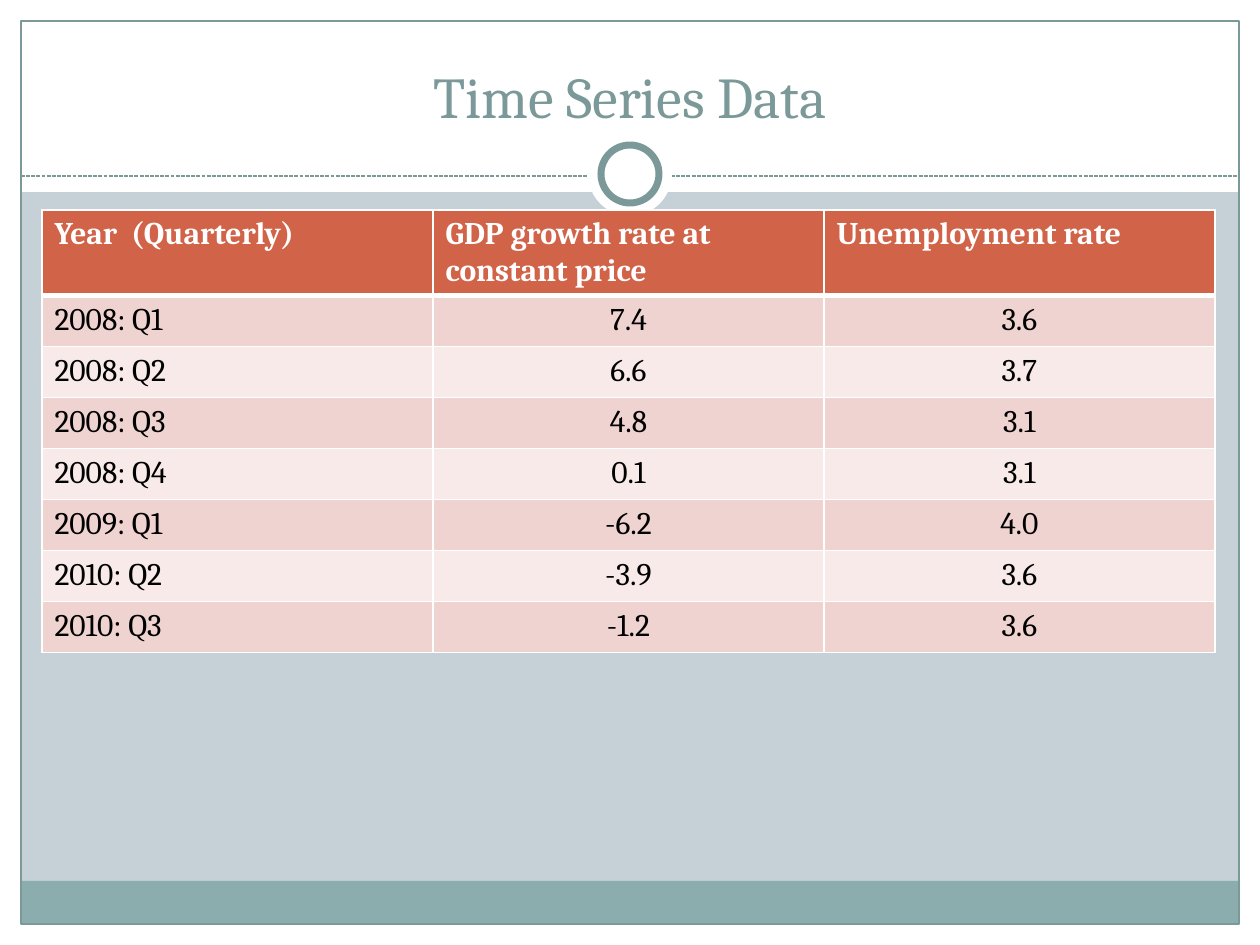
from lxml import etree
from pptx import Presentation
from pptx.dml.color import RGBColor
from pptx.enum.dml import MSO_LINE
from pptx.enum.shapes import MSO_CONNECTOR, MSO_SHAPE
from pptx.enum.text import MSO_ANCHOR, MSO_AUTO_SIZE, PP_ALIGN
from pptx.oxml.ns import qn
from pptx.util import Pt

RECTANGLE, OVAL = MSO_SHAPE.RECTANGLE, MSO_SHAPE.OVAL
STRAIGHT = MSO_CONNECTOR.STRAIGHT
SYSTEM_DASH = MSO_LINE.SQUARE_DOT
LEFT, CENTER = PP_ALIGN.LEFT, PP_ALIGN.CENTER
BOTTOM = MSO_ANCHOR.BOTTOM
NO_AUTOFIT = MSO_AUTO_SIZE.NONE

PX = 914400 // 126
FONT = "Cambria"
WHITE, BLACK, TEAL = "FFFFFF", "000000", "7C999A"
BACKGROUND, FOOTER = "C5D1D7", "8CADAE"
HEADER_FILL, BANDS = "D16349", ("EED3D0", "F7EAE9")

TITLE = "Time Series Data"
HEADERS = ["Year  (Quarterly)", "GDP growth rate at constant price", "Unemployment rate"]
ROWS = [
    ("2008: Q1", "7.4", "3.6"),
    ("2008: Q2", "6.6", "3.7"),
    ("2008: Q3", "4.8", "3.1"),
    ("2008: Q4", "0.1", "3.1"),
    ("2009: Q1", "-6.2", "4.0"),
    ("2010: Q2", "-3.9", "3.6"),
    ("2010: Q3", "-1.2", "3.6"),
]

WIDTH, HEIGHT, MARGIN = 1260, 945, 21
BAND_HEIGHT, FOOTER_TOP, DIVIDER_Y = 192, 881, 176
INNER_WIDTH, INNER_HEIGHT = WIDTH - 2 * MARGIN, HEIGHT - 2 * MARGIN
RING_CENTER = (WIDTH // 2, 174)
TABLE_LEFT, TABLE_TOP, COLUMN_WIDTH = 42, 210, 391
HEADER_HEIGHT, ROW_HEIGHT = 85, 51

DECORATION = [
    (RECTANGLE, (0, HEIGHT - MARGIN, WIDTH, MARGIN), WHITE, None),
    (RECTANGLE, (0, 0, WIDTH, BAND_HEIGHT), WHITE, None),
    (RECTANGLE, (0, 0, MARGIN, HEIGHT), WHITE, None),
    (RECTANGLE, (WIDTH - MARGIN, 0, MARGIN, HEIGHT), WHITE, None),
    (RECTANGLE, (MARGIN, FOOTER_TOP, INNER_WIDTH, HEIGHT - MARGIN - FOOTER_TOP), FOOTER, None),
    (RECTANGLE, (MARGIN, MARGIN, INNER_WIDTH, INNER_HEIGHT), None, 0.75),
]
RINGS = [(84, None), (58, 4)]


def color(value):
    return RGBColor.from_string(value)


def emu(*lengths):
    return [length * PX for length in lengths]


def write(frame, text, size=18, fill=BLACK, bold=False, align=LEFT):
    paragraph = frame.paragraphs[0]
    paragraph.alignment = align
    run = paragraph.add_run()
    run.text = text
    run.font.name = FONT
    run.font.size = Pt(size)
    run.font.bold = bold
    run.font.color.rgb = color(fill)


def add_shape(slide, kind, box, fill, line_width):
    shape = slide.shapes.add_shape(kind, *emu(*box))
    shape.shadow.inherit = False
    if fill:
        shape.fill.solid()
        shape.fill.fore_color.rgb = color(fill)
    else:
        shape.fill.background()
    if line_width:
        shape.line.color.rgb = color(TEAL)
        shape.line.width = Pt(line_width)
    else:
        shape.line.fill.background()


def add_divider(slide):
    line = slide.shapes.add_connector(
        STRAIGHT, *emu(MARGIN, DIVIDER_Y, WIDTH - MARGIN, DIVIDER_Y))
    line.line.color.rgb = color(TEAL)
    line.line.width = Pt(0.75)
    line.line.dash_style = SYSTEM_DASH
    properties = line.element.find(qn("p:spPr"))
    etree.SubElement(properties, qn("a:effectLst"))


def set_borders(cell, widths):
    properties = cell._tc.get_or_add_tcPr()
    for side, width in widths.items():
        border = etree.SubElement(properties, qn(f"a:ln{side}"), w=str(Pt(width)))
        solid = etree.SubElement(border, qn("a:solidFill"))
        etree.SubElement(solid, qn("a:srgbClr"), val=WHITE)


def add_data_table(slide):
    height = HEADER_HEIGHT + ROW_HEIGHT * len(ROWS)
    table = slide.shapes.add_table(
        len(ROWS) + 1, len(HEADERS),
        *emu(TABLE_LEFT, TABLE_TOP, COLUMN_WIDTH * len(HEADERS), height)).table
    for column in table.columns:
        column.width = COLUMN_WIDTH * PX
    for row_index, values in enumerate([HEADERS, *ROWS]):
        header = row_index == 0
        table.rows[row_index].height = (HEADER_HEIGHT if header else ROW_HEIGHT) * PX
        for column_index, text in enumerate(values):
            cell = table.cell(row_index, column_index)
            top, bottom = 3 if row_index == 1 else 1, 3 if header else 1
            set_borders(cell, {"L": 1, "R": 1, "T": top, "B": bottom})
            cell.fill.solid()
            cell.fill.fore_color.rgb = color(
                HEADER_FILL if header else BANDS[(row_index - 1) % 2])
            write(cell.text_frame, text, bold=header, fill=WHITE if header else BLACK,
                  align=LEFT if header or column_index == 0 else CENTER)


def place_title(slide):
    title = slide.shapes.title
    title.left, title.top, title.width, title.height = emu(42, 32, 1176, 104)
    title.text_frame.vertical_anchor = BOTTOM
    title.text_frame.auto_size = NO_AUTOFIT
    write(title.text_frame, TITLE, size=33, fill=TEAL, align=CENTER)
    title.element.getparent().append(title.element)


def main():
    presentation = Presentation()
    presentation.slide_width, presentation.slide_height = emu(WIDTH, HEIGHT)
    slide = presentation.slides.add_slide(presentation.slide_layouts[5])
    slide.background.fill.solid()
    slide.background.fill.fore_color.rgb = color(BACKGROUND)
    for decoration in DECORATION:
        add_shape(slide, *decoration)
    add_divider(slide)
    for diameter, line_width in RINGS:
        left, top = (center - diameter // 2 for center in RING_CENTER)
        add_shape(slide, OVAL, (left, top, diameter, diameter), WHITE, line_width)
    place_title(slide)
    add_data_table(slide)
    presentation.save("out.pptx")


if __name__ == "__main__":
    main()
